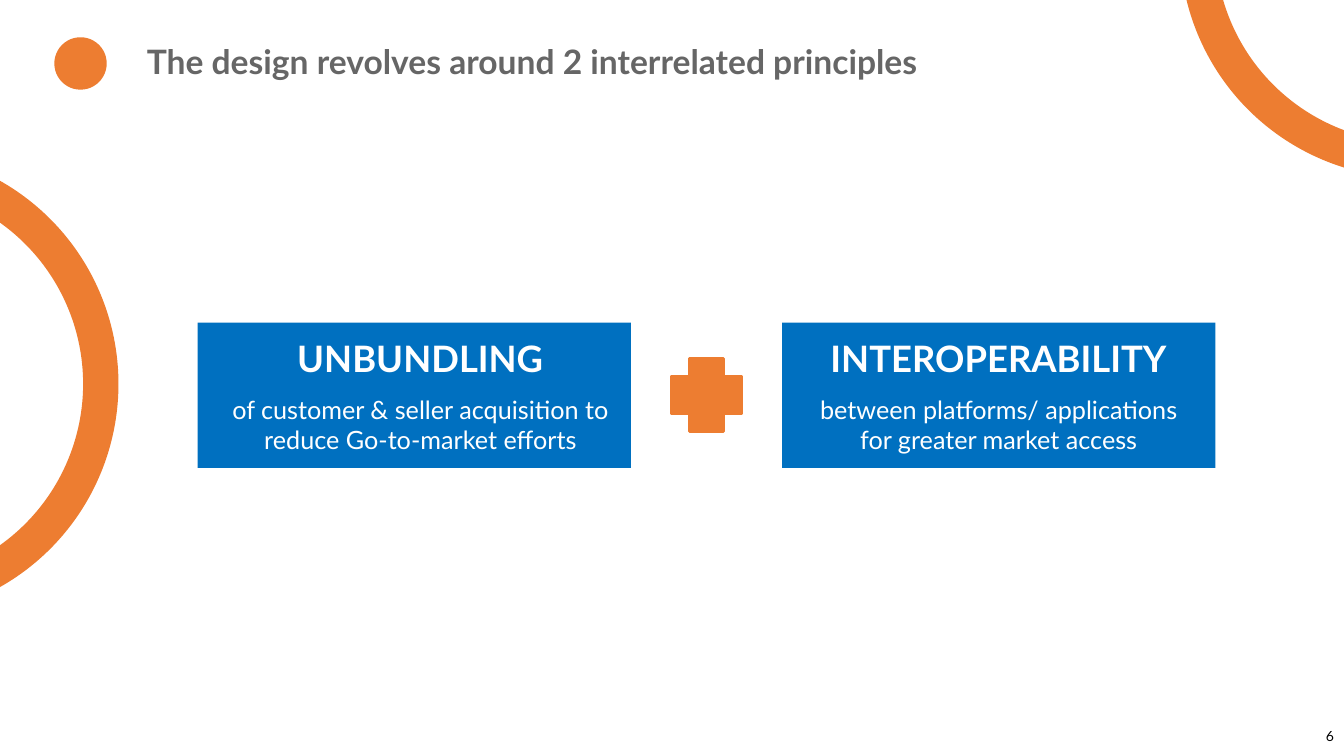
import pptx
import pptx.util
import pptx.dml.color
import pptx.enum.shapes
import pptx.enum.text

Cm = pptx.util.Cm
Pt = pptx.util.Pt
SHAPES = pptx.enum.shapes.MSO_SHAPE
ALIGN = pptx.enum.text.PP_ALIGN
ANCHOR = pptx.enum.text.MSO_ANCHOR

# Content
TITLE = "The design revolves around 2 interrelated principles"
PAGE_NUMBER = "6"
PRINCIPLES = [
    # heading, explanation, right inset in cm
    ("UNBUNDLING", "of customer & seller acquisition to reduce Go-to-market efforts", 0.2),
    ("INTEROPERABILITY", "between platforms/ applications for greater market access", 0.51),
]
COLORS = {"orange": "ED7D31", "blue": "0070C0", "gray": "666666",
          "white": "FFFFFF", "black": "000000"}
FONT = "Lato"

# Layout in cm
SLIDE_WIDTH, SLIDE_HEIGHT = 33.87, 19.05
RING_SIZE = 10.87
RINGS = [(-8.33, 4.24), (30.18, -6.83)]
BOX_LEFT, BOX_TOP, BOX_WIDTH, BOX_HEIGHT = 4.98, 8.13, 10.92, 3.66
BOX_STEP = 14.73
PLUS_WIDTH, PLUS_HEIGHT, PLUS_TOP = 1.75, 1.83, 9.04


def color(name):
    return pptx.dml.color.RGBColor.from_string(COLORS[name])


def add_shape(slide, kind, left, top, width, height, fill=None, line=None, line_width=0):
    shape = slide.shapes.add_shape(kind, Cm(left), Cm(top), Cm(width), Cm(height))
    shape.shadow.inherit = False
    for format_part, name in ((shape.fill, fill), (shape.line.fill, line)):
        if name:
            format_part.solid()
            format_part.fore_color.rgb = color(name)
        else:
            format_part.background()
    if line:
        shape.line.width = Pt(line_width)
    return shape


def write(paragraph, text, size, color_name, bold=False, align=ALIGN.LEFT):
    paragraph.text = text
    paragraph.alignment = align
    for run in paragraph.runs:
        run.font.name = FONT
        run.font.size = Pt(size)
        run.font.bold = bold
        run.font.color.rgb = color(color_name)


def add_text(slide, left, top, width, height, text, size, color_name, **style):
    frame = slide.shapes.add_textbox(Cm(left), Cm(top), Cm(width), Cm(height)).text_frame
    frame.word_wrap = True
    write(frame.paragraphs[0], text, size, color_name, **style)
    return frame


def add_principle(slide, left, heading, explanation, right_inset):
    box = add_shape(slide, SHAPES.RECTANGLE, left, BOX_TOP, BOX_WIDTH, BOX_HEIGHT, "blue")
    frame = box.text_frame
    frame.word_wrap = True
    frame.vertical_anchor = ANCHOR.MIDDLE
    frame.margin_left, frame.margin_right = Cm(0.51), Cm(right_inset)
    frame.margin_top = frame.margin_bottom = 0
    write(frame.paragraphs[0], heading, 26, "white", bold=True, align=ALIGN.CENTER)
    paragraph = frame.add_paragraph()
    write(paragraph, explanation, 18, "white", align=ALIGN.CENTER)
    paragraph.space_before = Pt(10)


def main():
    presentation = pptx.Presentation()
    presentation.slide_width = Cm(SLIDE_WIDTH)
    presentation.slide_height = Cm(SLIDE_HEIGHT)
    slide = presentation.slides.add_slide(presentation.slide_layouts[6])

    # Title with its dot
    add_shape(slide, SHAPES.OVAL, 1.37, 0.94, 1.32, 1.32, "orange")
    add_text(slide, 3.45, 0.91, 29.03, 1.27, TITLE, 24, "gray", bold=True)

    # Rings cut by the slide edges
    for left, top in RINGS:
        add_shape(slide, SHAPES.OVAL, left, top, RING_SIZE, RING_SIZE,
                  line="orange", line_width=25.25)

    # Principles, joined by a plus
    for index, principle in enumerate(PRINCIPLES):
        add_principle(slide, BOX_LEFT + index * BOX_STEP, *principle)
    plus_left = BOX_LEFT + (BOX_WIDTH + BOX_STEP - PLUS_WIDTH) / 2
    add_shape(slide, SHAPES.CROSS, plus_left, PLUS_TOP, PLUS_WIDTH, PLUS_HEIGHT,
              "orange", "orange", 2)

    # Page number
    number = add_text(slide, 32.72, 18.03, 1.15, 1.02, PAGE_NUMBER, 10, "black",
                      align=ALIGN.RIGHT)
    number.vertical_anchor = ANCHOR.MIDDLE

    presentation.save("out.pptx")


if __name__ == "__main__":
    main()
